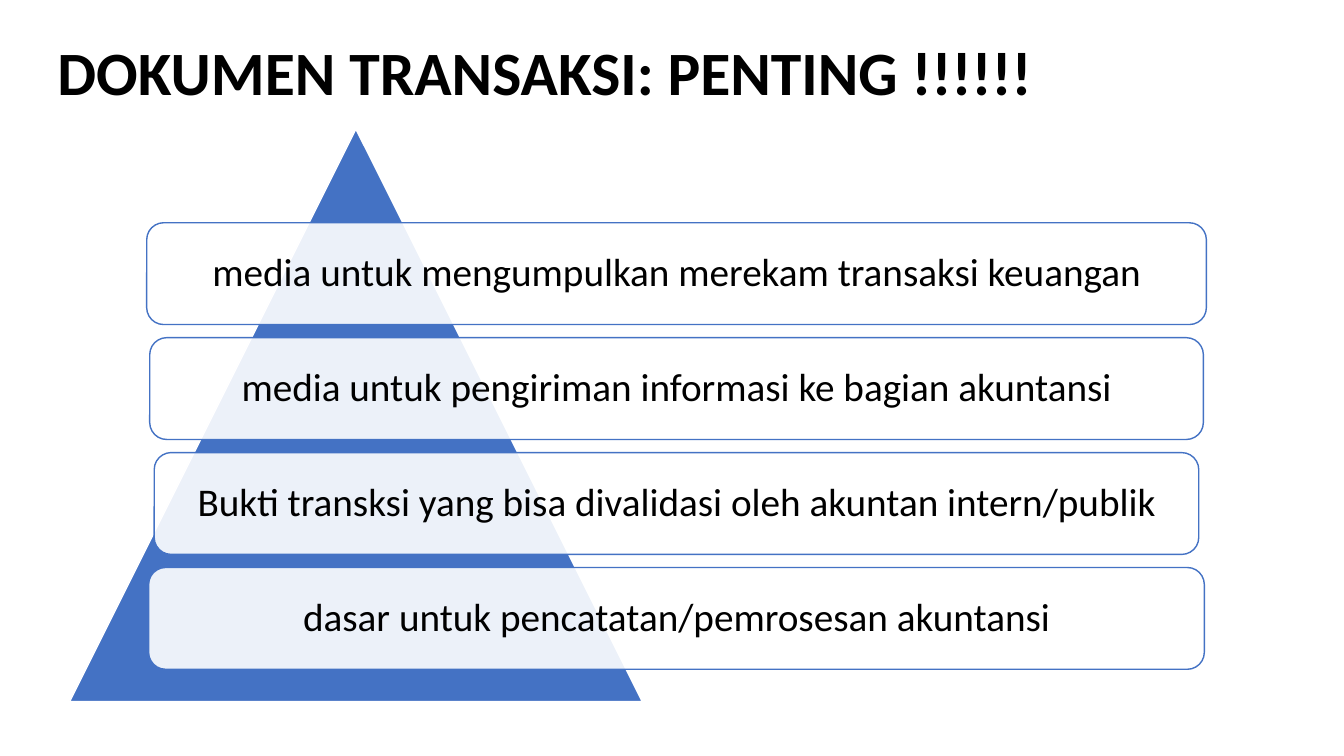
from lxml import etree
from pptx import Presentation, util as u
from pptx.dml.color import RGBColor
from pptx.enum import shapes, text
from pptx.oxml.ns import qn

COLORS = {"blue": "4472C4", "white": "FFFFFF", "black": "000000"}
FONT = "Calibri"
WIDTH, HEIGHT = 13.33, 7.5
CENTER = 6.71
TOP, PITCH, BAR_HEIGHT = 2.21, 1.14, 1.01
BARS = [
    ("media untuk mengumpulkan merekam transaksi keuangan", 10.51),
    ("media untuk pengiriman informasi ke bagian akuntansi", 10.45),
    ("Bukti transksi yang bisa divalidasi oleh akuntan intern/publik", 10.36),
    ("dasar untuk pencatatan/pemrosesan akuntansi", 10.47),
]


def rgb(name):
    return RGBColor.from_string(COLORS[name])


def box(*lengths):
    return [u.Inches(v) for v in lengths]


def write(sp, words, size, align, bold=False):
    tf = sp.text_frame
    tf.word_wrap = True
    tf.vertical_anchor = text.MSO_ANCHOR.MIDDLE
    tf.text = words
    p = tf.paragraphs[0]
    p.alignment = align
    p.line_spacing = 0.9
    font = p.runs[0].font
    font.name, font.size, font.bold = FONT, u.Pt(size), bold
    font.color.rgb = rgb("black")


def add_title(s, words):
    sp = s.shapes.add_textbox(*box(0.47, 0.31, 12.49, 0.87))
    write(sp, words, 44, text.PP_ALIGN.LEFT, bold=True)


def add_shape(s, kind, at, fill, line):
    sp = s.shapes.add_shape(kind, *box(*at))
    sp.shadow.inherit = False
    sp.fill.solid()
    sp.fill.fore_color.rgb = rgb(fill)
    sp.line.color.rgb = rgb(line)
    sp.line.width = u.Pt(1)
    return sp


def set_opacity(sp, percent):
    color = sp._element.spPr.find(qn("a:solidFill"))[0]
    etree.SubElement(color, qn("a:alpha")).set("val", str(percent * 1000))


def add_bar(s, row, words, width):
    at = (CENTER - width / 2, TOP + row * PITCH, width, BAR_HEIGHT)
    sp = add_shape(s, shapes.MSO_SHAPE.ROUNDED_RECTANGLE, at, "white", "blue")
    set_opacity(sp, 90)
    write(sp, words, 28, text.PP_ALIGN.CENTER)


def main():
    prs = Presentation()
    prs.slide_width, prs.slide_height = box(WIDTH, HEIGHT)
    s = prs.slides.add_slide(prs.slide_layouts[6])
    add_title(s, "DOKUMEN TRANSAKSI: PENTING !!!!!!")
    add_shape(s, shapes.MSO_SHAPE.ISOSCELES_TRIANGLE,
              (0.69, 1.28, 5.68, 5.68), "blue", "white")
    for row, (words, width) in enumerate(BARS):
        add_bar(s, row, words, width)
    prs.save("out.pptx")


if __name__ == "__main__":
    main()
